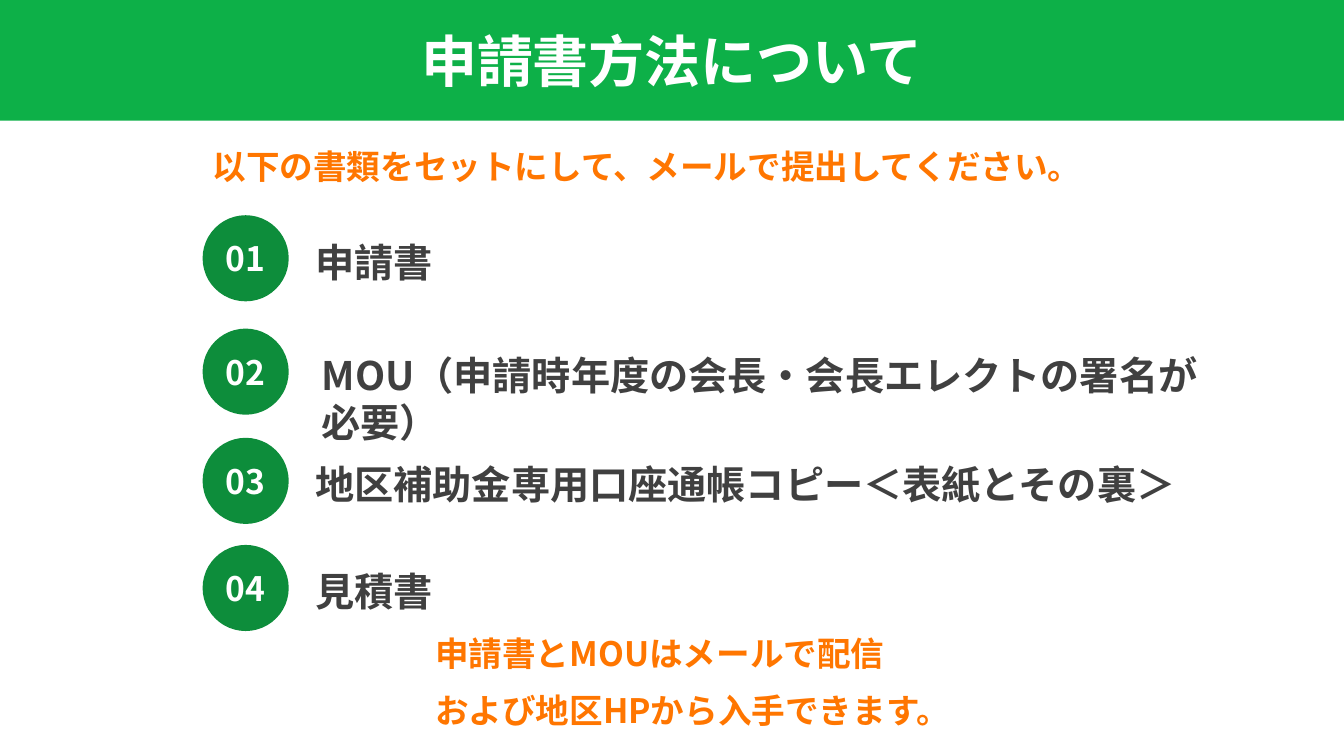
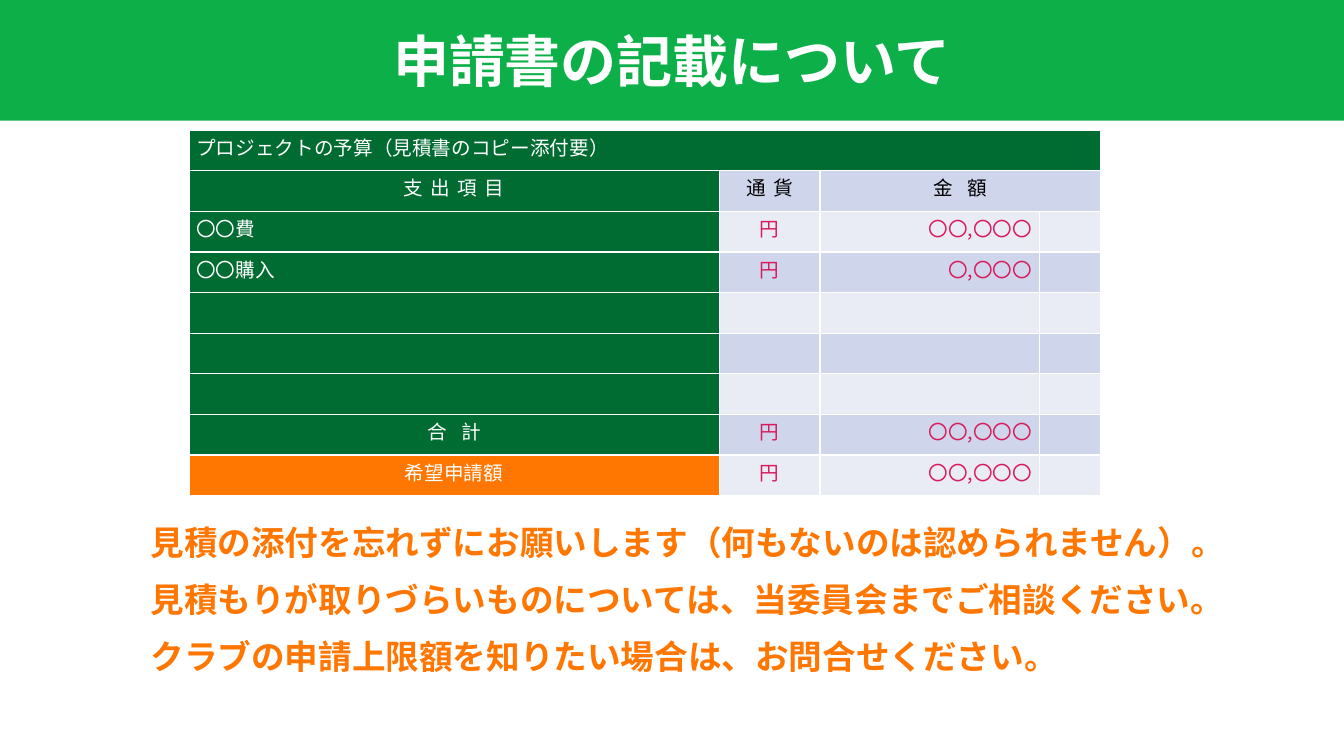
from dataclasses import dataclass

from lxml.etree import SubElement
from pptx import Presentation
from pptx.dml.color import RGBColor
from pptx.enum.shapes import MSO_SHAPE
from pptx.enum.text import MSO_ANCHOR, MSO_AUTO_SIZE, PP_ALIGN
from pptx.oxml.ns import qn
from pptx.util import Emu, Pt

FONT = "Noto Sans CJK JP"
WHITE, BLACK, GREY = "FFFFFF", "000000", "404040"
BAND_GREEN, BADGE_GREEN, TABLE_GREEN = "0DB048", "0D8D3B", "006C31"
ORANGE, PINK = "FF7600", "D91A5C"
STRIPES = ("E9EBF5", "CFD5EA")

PAGE_WIDTH, PAGE_HEIGHT, BAND_HEIGHT = 1280, 720, 115
BADGE_LEFT, BADGE_SIZE = 193, 82
LABEL_DROP, LABEL_HEIGHT = 17, 55
COLUMN_WIDTHS = (505, 96, 209, 58)


@dataclass(frozen=True)
class Box:
    left: int
    top: int
    width: int
    height: int

    def emu(self) -> tuple[Emu, ...]:
        return tuple(px(n) for n in (self.left, self.top, self.width, self.height))


@dataclass(frozen=True)
class TextStyle:
    size: int
    color: str
    bold: bool = True
    align: PP_ALIGN = PP_ALIGN.LEFT
    gap: int = 0
    tracking: float = 0


@dataclass(frozen=True)
class Step:
    number: str
    text: str
    top: int
    label_left: int
    label_width: int


@dataclass(frozen=True)
class BudgetRow:
    item: str = ""
    currency: str = ""
    amount: str = ""
    align: PP_ALIGN = PP_ALIGN.JUSTIFY
    fill: str = TABLE_GREEN
    tracking: float = 0
    head_tracking: float = 0
    value_color: str = PINK
    amount_align: PP_ALIGN = PP_ALIGN.RIGHT


TITLE = TextStyle(40, WHITE, align=PP_ALIGN.CENTER)
BADGE = TextStyle(24, WHITE, align=PP_ALIGN.CENTER)
LABEL = TextStyle(28, GREY)
NOTE = TextStyle(24, ORANGE, gap=6)

STEPS = (
    Step("01", "申請書", 205, 291, 136),
    Step("02", "MOU（申請時年度の会長・会長エレクトの署名が必要）", 313, 297, 890),
    Step("03", "地区補助金専用口座通帳コピー＜表紙とその裏＞", 417, 291, 846),
    Step("04", "見積書", 519, 291, 134),
)

BUDGET = (
    BudgetRow("プロジェクトの予算（見積書のコピー添付要）"),
    BudgetRow("支出項目", "通貨", "金額", PP_ALIGN.CENTER, tracking=5.2,
              head_tracking=10.5, value_color=BLACK, amount_align=PP_ALIGN.CENTER),
    BudgetRow("〇〇費", "円", "〇〇,〇〇〇"),
    BudgetRow("〇〇購入", "円", "〇,〇〇〇"),
    BudgetRow(),
    BudgetRow(),
    BudgetRow(),
    BudgetRow("合計", "円", "〇〇,〇〇〇", PP_ALIGN.CENTER, tracking=10.5),
    BudgetRow("希望申請額", "円", "〇〇,〇〇〇", PP_ALIGN.CENTER, ORANGE),
)


def px(count: int) -> Emu:
    return Emu(count * 9525)


def rgb(value: str) -> RGBColor:
    return RGBColor.from_string(value)


def write(para, text: str, style: TextStyle) -> None:
    para.text = text
    para.alignment = style.align
    if style.gap:
        para.space_before = para.space_after = Pt(style.gap)
    for span in para.runs:
        font = span.font
        font.name, font.size, font.bold = FONT, Pt(style.size), style.bold
        font.color.rgb = rgb(style.color)
        properties = span._r.get_or_add_rPr()
        SubElement(properties, qn("a:ea"), typeface=FONT)
        if style.tracking:
            properties.set("spc", str(round(style.tracking * 100)))


def add_shape(shapes, kind: MSO_SHAPE, box: Box, fill: str, text: str,
              style: TextStyle, wrap: bool = True) -> None:
    shape = shapes.add_shape(kind, *box.emu())
    shape.shadow.inherit = False
    shape.fill.solid()
    shape.fill.fore_color.rgb = rgb(fill)
    shape.line.fill.background()
    frame = shape.text_frame
    frame.word_wrap = wrap
    frame.vertical_anchor = MSO_ANCHOR.MIDDLE
    write(frame.paragraphs[0], text, style)


def add_text(shapes, box: Box, lines: tuple[str, ...], style: TextStyle) -> None:
    frame = shapes.add_textbox(*box.emu()).text_frame
    frame.word_wrap = True
    frame.auto_size = MSO_AUTO_SIZE.SHAPE_TO_FIT_TEXT
    frame.text = "\n".join(lines)
    for para, line in zip(frame.paragraphs, lines):
        write(para, line, style)


def add_page(deck, title: str):
    """Add a blank page with the green title band."""
    page = deck.slides.add_slide(deck.slide_layouts[6])
    add_shape(page.shapes, MSO_SHAPE.RECTANGLE,
              Box(0, 0, PAGE_WIDTH, BAND_HEIGHT), BAND_GREEN, title, TITLE)
    return page


def add_step(page, step: Step) -> None:
    shapes = page.shapes.add_group_shape().shapes
    add_shape(shapes, MSO_SHAPE.FLOWCHART_CONNECTOR,
              Box(BADGE_LEFT, step.top, BADGE_SIZE, BADGE_SIZE),
              BADGE_GREEN, step.number, BADGE, wrap=False)
    label = Box(step.label_left, step.top + LABEL_DROP, step.label_width, LABEL_HEIGHT)
    add_text(shapes, label, (step.text,), LABEL)


def fill_cell(cell, text: str, style: TextStyle, fill: str) -> None:
    cell.margin_left = cell.margin_right = px(7)
    cell.margin_top = cell.margin_bottom = 0
    cell.vertical_anchor = MSO_ANCHOR.MIDDLE
    para = cell.text_frame.paragraphs[0]
    para.line_spacing = Pt(15)
    if text:
        write(para, text, style)
    properties = cell._tc.get_or_add_tcPr()
    for side in ("lnL", "lnR", "lnT", "lnB"):
        line = SubElement(properties, qn(f"a:{side}"), w=str(Pt(1)))
        SubElement(SubElement(line, qn("a:solidFill")), qn("a:srgbClr"), val=WHITE)
    cell.fill.solid()
    cell.fill.fore_color.rgb = rgb(fill)


def add_budget(page, box: Box) -> None:
    table = page.shapes.add_table(len(BUDGET), len(COLUMN_WIDTHS), *box.emu()).table
    table.first_row = table.horz_banding = False
    for column, width in zip(table.columns, COLUMN_WIDTHS):
        column.width = px(width)
    for index, row in enumerate(BUDGET):
        item = TextStyle(14, WHITE, False, row.align, tracking=row.tracking)
        value = TextStyle(14, row.value_color, False, PP_ALIGN.CENTER,
                          tracking=row.head_tracking / 2)
        amount = TextStyle(14, row.value_color, False, row.amount_align,
                           tracking=row.head_tracking)
        stripe = STRIPES[index % 2]
        contents = ((row.item, item, row.fill), (row.currency, value, stripe),
                    (row.amount, amount, stripe), ("", amount, stripe))
        for column, content in enumerate(contents):
            fill_cell(table.cell(index, column), *content)
    table.cell(0, 0).merge(table.cell(0, 3))
    table.cell(1, 2).merge(table.cell(1, 3))


def build_documents_page(deck) -> None:
    page = add_page(deck, "申請書方法について")
    for step in STEPS:
        add_step(page, step)
    add_text(page.shapes, Box(405, 598, 507, 104),
             ("申請書とMOUはメールで配信", "および地区HPから入手できます。"), NOTE)
    add_text(page.shapes, Box(193, 134, 1022, 48),
             ("以下の書類をセットにして、メールで提出してください。",), NOTE)


def build_budget_page(deck) -> None:
    page = add_page(deck, "申請書の記載について")
    add_budget(page, Box(180, 124, sum(COLUMN_WIDTHS), 348))
    add_text(page.shapes, Box(134, 492, 1022, 158), (
        "見積の添付を忘れずにお願いします（何もないのは認められません）。",
        "見積もりが取りづらいものについては、当委員会までご相談ください。",
        "クラブの申請上限額を知りたい場合は、お問合せください。",
    ), NOTE)


def main() -> None:
    deck = Presentation()
    deck.slide_width, deck.slide_height = px(PAGE_WIDTH), px(PAGE_HEIGHT)
    build_documents_page(deck)
    build_budget_page(deck)
    deck.save("out.pptx")


if __name__ == "__main__":
    main()
